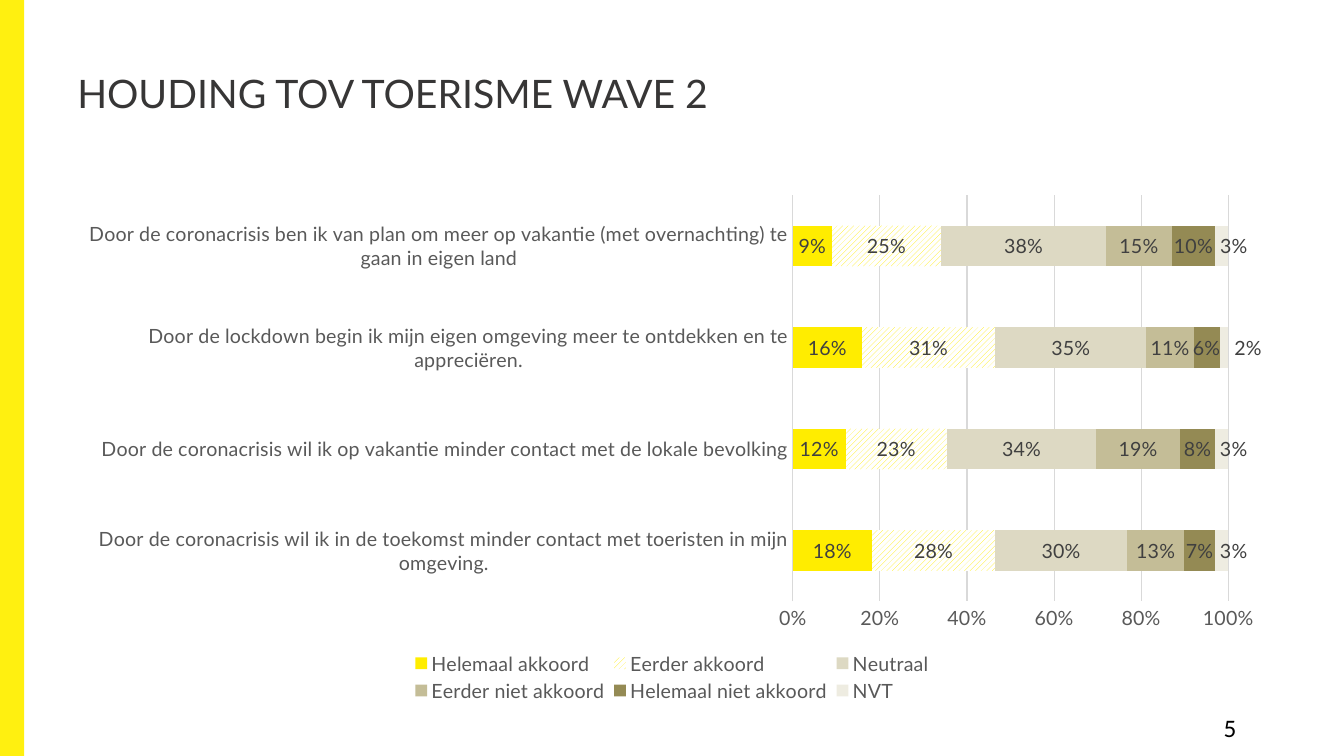
from dataclasses import dataclass

from lxml.etree import SubElement
from pptx import Presentation
from pptx.chart.data import CategoryChartData
from pptx.dml.color import RGBColor
from pptx.enum.chart import XL_CHART_TYPE, XL_LABEL_POSITION, XL_LEGEND_POSITION, XL_TICK_MARK
from pptx.enum.dml import MSO_PATTERN
from pptx.enum.shapes import MSO_SHAPE
from pptx.enum.text import MSO_ANCHOR, PP_ALIGN
from pptx.oxml import parse_xml
from pptx.oxml.ns import nsdecls, qn
from pptx.util import Pt


@dataclass(frozen=True)
class Theme:
    font: str = "Lato"
    number_font: str = "Calibri"
    title_size: int = 28
    number_size: int = 18
    chart_size: int = 14
    band: str = "FFF010"
    title: str = "373636"
    black: str = "000000"
    white: str = "FFFFFF"
    axis_text: str = "595959"
    label_text: str = "404040"
    grid: str = "D9D9D9"
    accent: str = "FFED00"
    series: tuple = ("FFED00", None, "DDD9C3", "C4BD97", "948A54", "EEECE1")


CATEGORIES = [
    "Door de coronacrisis wil ik in de toekomst minder contact met toeristen in mijn omgeving.",
    "Door de coronacrisis wil ik op vakantie minder contact met de lokale bevolking",
    "Door de lockdown begin ik mijn eigen omgeving meer te ontdekken en te appreciëren.",
    "Door de coronacrisis ben ik van plan om meer op vakantie (met overnachting) te gaan in eigen land",
]
ANSWERS = {
    "Helemaal akkoord": (0.18, 0.12, 0.16, 0.09),
    "Eerder akkoord": (0.28, 0.23, 0.31, 0.25),
    "Neutraal": (0.30, 0.34, 0.35, 0.38),
    "Eerder niet akkoord": (0.13, 0.19, 0.11, 0.15),
    "Helemaal niet akkoord": (0.07, 0.08, 0.06, 0.10),
    "NVT": (0.03, 0.03, 0.02, 0.03),
}
NVT_SHIFTS = (0.01, 0.01, 0.02, 0.01)


def rgb(color):
    return RGBColor.from_string(color)


def layout_xml(**values):
    layout = parse_xml(f"<c:layout {nsdecls('c')}><c:manualLayout/></c:layout>")
    for tag, value in values.items():
        SubElement(layout[0], qn(f"c:{tag}")).set("val", str(value))
    return layout


class SlideBuilder:
    def __init__(self, slide, theme):
        self.s = slide
        self.theme = theme

    def style(self, font, size, color, name=None):
        font.name = name or self.theme.font
        font.size = Pt(size)
        font.bold = False
        font.color.rgb = rgb(color)

    def band(self, x, y, w, h):
        sp = self.s.shapes.add_shape(MSO_SHAPE.RECTANGLE, Pt(x), Pt(y), Pt(w), Pt(h))
        sp.shadow.inherit = False
        sp.fill.solid()
        sp.fill.fore_color.rgb = rgb(self.theme.band)
        sp.line.fill.background()

    def title(self, text, x, y, w, h):
        sp = self.s.shapes.title
        sp.left, sp.top, sp.width, sp.height = Pt(x), Pt(y), Pt(w), Pt(h)
        tf = sp.text_frame
        tf.text = text
        tf.vertical_anchor = MSO_ANCHOR.MIDDLE
        p = tf.paragraphs[0]
        p.alignment = PP_ALIGN.LEFT
        self.style(p.runs[0].font, self.theme.title_size, self.theme.title)

    def page_number(self, text, x, y, w, h):
        tf = self.s.shapes.add_textbox(Pt(x), Pt(y), Pt(w), Pt(h)).text_frame
        tf.word_wrap = True
        tf.text = text
        r = tf.paragraphs[0].runs[0]
        self.style(r.font, self.theme.number_size, self.theme.black, self.theme.number_font)

    def stacked_chart(self, categories, answers, x, y, w, h):
        data = CategoryChartData(number_format="0%")
        data.categories = categories
        for name, values in answers.items():
            data.add_series(name, values)
        chart = self.s.shapes.add_chart(
            XL_CHART_TYPE.BAR_STACKED_100, Pt(x), Pt(y), Pt(w), Pt(h), data).chart
        chart.has_title = False
        self.style(chart.font, self.theme.chart_size, self.theme.black)
        plot = chart.plots[0]
        plot.vary_by_categories = False
        plot.gap_width = 150
        plot.overlap = 100
        for series, color in zip(plot.series, self.theme.series):
            self.bar(series, color)
        self.shift_labels(plot.series[-1], NVT_SHIFTS)
        self.axes(chart)
        self.legend(chart)
        self.place_plot(chart)

    def bar(self, series, color):
        fill = series.format.fill
        if color:
            fill.solid()
            fill.fore_color.rgb = rgb(color)
        else:
            fill.patterned()
            fill.pattern = MSO_PATTERN.WIDE_UPWARD_DIAGONAL
            fill.fore_color.rgb = rgb(self.theme.accent)
            fill.back_color.rgb = rgb(self.theme.white)
        series.invert_if_negative = False
        labels = series.data_labels
        labels.show_value = True
        labels.number_format = "0%"
        labels.number_format_is_linked = False
        labels.position = XL_LABEL_POSITION.CENTER
        self.style(labels.font, self.theme.chart_size, self.theme.label_text)

    def shift_labels(self, series, shifts):
        for i in range(len(shifts)):
            label = series.points[i].data_label
            label.position = XL_LABEL_POSITION.CENTER
            self.style(label.font, self.theme.chart_size, self.theme.label_text)
        for label, shift in zip(series._element.xpath("c:dLbls/c:dLbl"), shifts):
            label.insert(1, layout_xml(x=shift, y=0))
            label.insert(2, parse_xml(
                f'<c:numFmt {nsdecls("c")} formatCode="0%" sourceLinked="0"/>'))

    def axes(self, chart):
        cat, val = chart.category_axis, chart.value_axis
        for axis in (cat, val):
            axis.major_tick_mark = axis.minor_tick_mark = XL_TICK_MARK.NONE
            self.style(axis.tick_labels.font, self.theme.chart_size, self.theme.axis_text)
        val.minimum_scale, val.maximum_scale, val.major_unit = 0, 1, 0.2
        val.tick_labels.number_format = "0%"
        val.tick_labels.number_format_is_linked = False
        val.format.line.fill.background()
        val.has_major_gridlines = True
        for line in (cat.format.line, val.major_gridlines.format.line):
            line.color.rgb = rgb(self.theme.grid)
            line.width = Pt(0.75)

    def legend(self, chart):
        chart.has_legend = True
        legend = chart.legend
        legend.position = XL_LEGEND_POSITION.BOTTOM
        legend.include_in_layout = False
        self.style(legend.font, self.theme.chart_size, self.theme.axis_text)
        for old in legend._element.findall(qn("c:layout")):
            legend._element.remove(old)
        legend._element.find(qn("c:legendPos")).addnext(layout_xml(
            xMode="edge", yMode="edge", x=0.28, y=0.89, w=0.44, h=0.11))

    def place_plot(self, chart):
        area = chart._chartSpace.chart.plotArea
        for old in area.findall(qn("c:layout")):
            area.remove(old)
        area.insert(0, layout_xml(layoutTarget="inner", xMode="edge", yMode="edge",
                                  x=0.6, y=0.02, w=0.36, h=0.78))


def main():
    prs = Presentation()
    prs.slide_width, prs.slide_height = Pt(960), Pt(540)
    slide = SlideBuilder(prs.slides.add_slide(prs.slide_layouts[5]), Theme())
    slide.band(0, 0, 17.28, 540)
    slide.page_number("5", 866.9, 505.5, 45, 29)
    slide.title("HOUDING TOV TOERISME WAVE 2", 48, 21.6, 864, 90)
    slide.stacked_chart(CATEGORIES, ANSWERS, 48, 132, 864, 372)
    prs.save("out.pptx")


if __name__ == "__main__":
    main()
